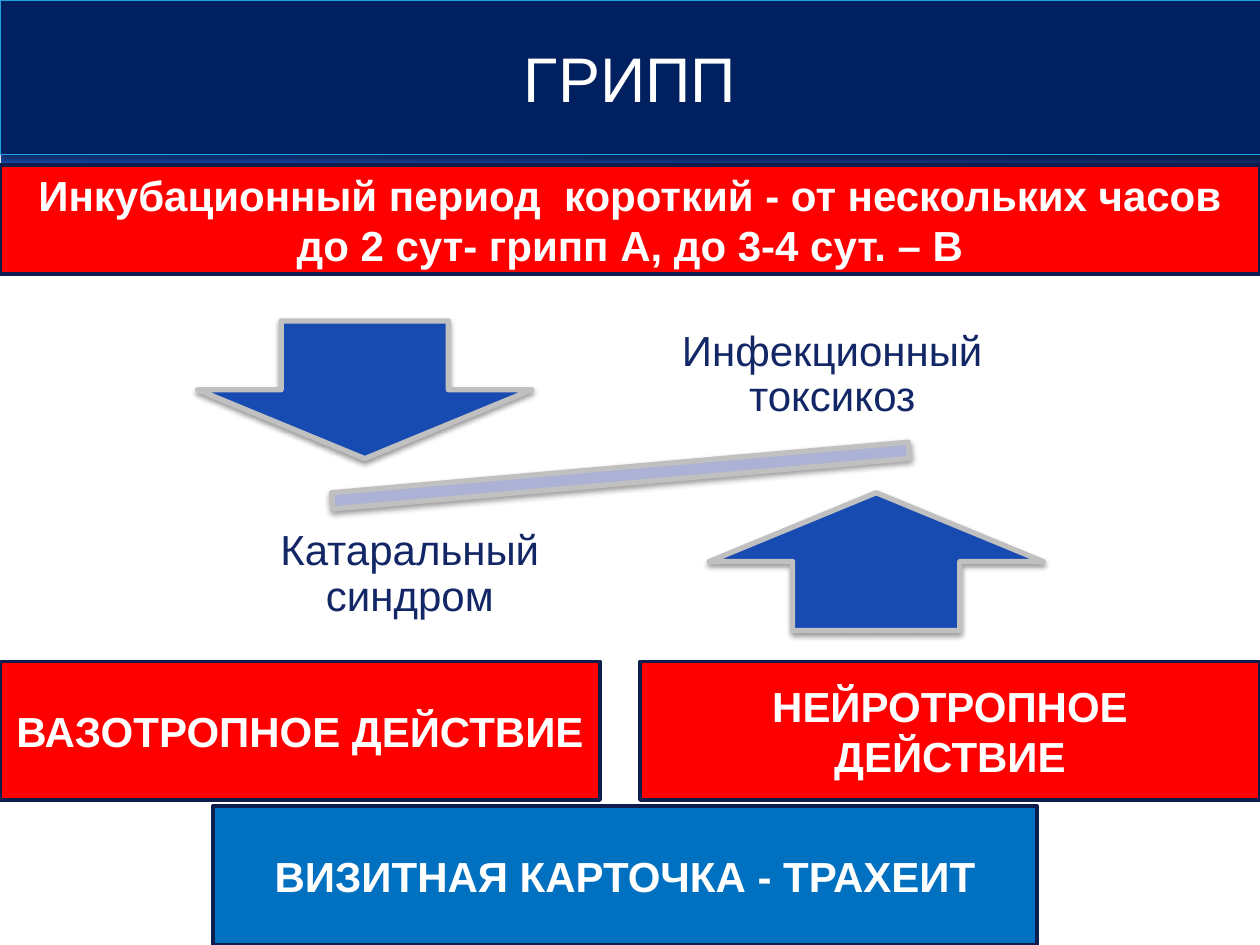
from lxml import etree
from pptx import Presentation
from pptx.dml.color import RGBColor
from pptx.enum.shapes import MSO_SHAPE
from pptx.enum.text import MSO_ANCHOR, PP_ALIGN
from pptx.oxml import parse_xml
from pptx.oxml.ns import nsdecls
from pptx.util import Pt

RECT, MINUS = MSO_SHAPE.RECTANGLE, MSO_SHAPE.MATH_MINUS
DOWN, UP = MSO_SHAPE.DOWN_ARROW, MSO_SHAPE.UP_ARROW
MIDDLE, CENTER = MSO_ANCHOR.MIDDLE, PP_ALIGN.CENTER

WHITE = RGBColor(0xFF, 0xFF, 0xFF)
NAVY = RGBColor(0x00, 0x20, 0x60)
SKY = RGBColor(0x22, 0xA2, 0xE2)
BLUE = RGBColor(0x18, 0x4B, 0xB2)
DARK = RGBColor(0x10, 0x31, 0x75)
EDGE = RGBColor(0x0E, 0x1D, 0x4C)
RED = RGBColor(0xFF, 0x00, 0x00)
AZURE = RGBColor(0x00, 0x70, 0xC0)
LILAC = RGBColor(0xAC, 0xB2, 0xD5)
GRAY = RGBColor(0xC0, 0xC0, 0xC0)
INK = RGBColor(0x13, 0x27, 0x67)

SHADOW = (
    f'<a:effectLst {nsdecls("a")}>'
    '<a:outerShdw blurRad="39370" dist="20320" dir="5400000" rotWithShape="0">'
    '<a:srgbClr val="000000"><a:alpha val="38000"/></a:srgbClr>'
    '</a:outerShdw></a:effectLst>'
)


def write(shape, text, size, color, bold=False):
    frame = shape.text_frame
    frame.text = text
    frame.word_wrap = True
    frame.vertical_anchor = MIDDLE
    para = frame.paragraphs[0]
    para.alignment = CENTER
    font = para.runs[0].font
    font.name, font.size, font.bold = "Arial", Pt(size), bold
    font.color.rgb = color


def paint(shape, fill, line, width, shade=False):
    shape.fill.solid()
    shape.fill.fore_color.rgb = fill
    shape.line.color.rgb = line
    shape.line.width = Pt(width)
    if shade:
        props = shape._element.spPr
        for old in props.findall("{*}effectLst"):
            props.remove(old)
        props.append(parse_xml(SHADOW))
    elif not shape.is_placeholder:
        shape.shadow.inherit = False


prs = Presentation()
prs.slide_width, prs.slide_height = Pt(720), Pt(540)
slide = prs.slides.add_slide(prs.slide_layouts[5])
shapes = slide.shapes

# Title
title = shapes.title
title.left, title.top, title.width, title.height = Pt(0), Pt(0), Pt(720), Pt(88.5)
paint(title, NAVY, SKY, 0.5, True)
write(title, "ГРИПП", 36, WHITE)

# Gradient strip, behind the title
strip = shapes.add_shape(RECT, Pt(0.5), Pt(87.8), Pt(719.5), Pt(6))
strip.shadow.inherit = False
strip.line.fill.background()
strip.fill.gradient()
strip.fill.gradient_angle = 0
for stop, color, place in zip(strip.fill.gradient_stops, (BLUE, DARK), (0, 1)):
    stop.color.rgb = color
    stop.position = place
title._element.addprevious(strip._element)

# Framed statements
boxes = [
    (0, 378, 342.9, 79.2, RED, "ВАЗОТРОПНОЕ ДЕЙСТВИЕ"),
    (365.7, 378, 354.3, 79.2, RED, "НЕЙРОТРОПНОЕ ДЕЙСТВИЕ"),
    (121.7, 460.7, 471, 79.2, AZURE, "ВИЗИТНАЯ КАРТОЧКА - ТРАХЕИТ"),
    (0, 94.4, 720, 62.2, RED, "Инкубационный период  короткий - от нескольких "
     "часов до 2 сут- грипп А, до 3-4 сут. – В"),
]
for x, y, w, h, fill, text in boxes:
    box = shapes.add_shape(RECT, Pt(x), Pt(y), Pt(w), Pt(h))
    paint(box, fill, EDGE, 2)
    write(box, text, 24, WHITE, True)

# Balance beam and arrows
signs = [
    (MINUS, 129.6, 252, 450, 39.6, LILAC, 355),
    (DOWN, 113, 183.4, 191, 78.7, BLUE, 0),
    (UP, 405.2, 281.6, 191, 78.7, BLUE, 0),
]
for kind, x, y, w, h, fill, turn in signs:
    sign = shapes.add_shape(kind, Pt(x), Pt(y), Pt(w), Pt(h))
    sign.rotation = turn
    paint(sign, fill, GRAY, 3, True)

# Labels beside the arrows
for x, y, text in [(373.7, 173.3, "Инфекционный токсикоз"),
                   (132.3, 287.5, "Катаральный синдром")]:
    label = shapes.add_textbox(Pt(x), Pt(y), Pt(203.8), Pt(82))
    write(label, text, 24, INK)
    frame = label.text_frame
    frame.margin_left = frame.margin_right = Pt(13.5)
    frame.margin_top = frame.margin_bottom = Pt(13.5)
    frame.paragraphs[0].line_spacing = 0.9

prs.save("out.pptx")
